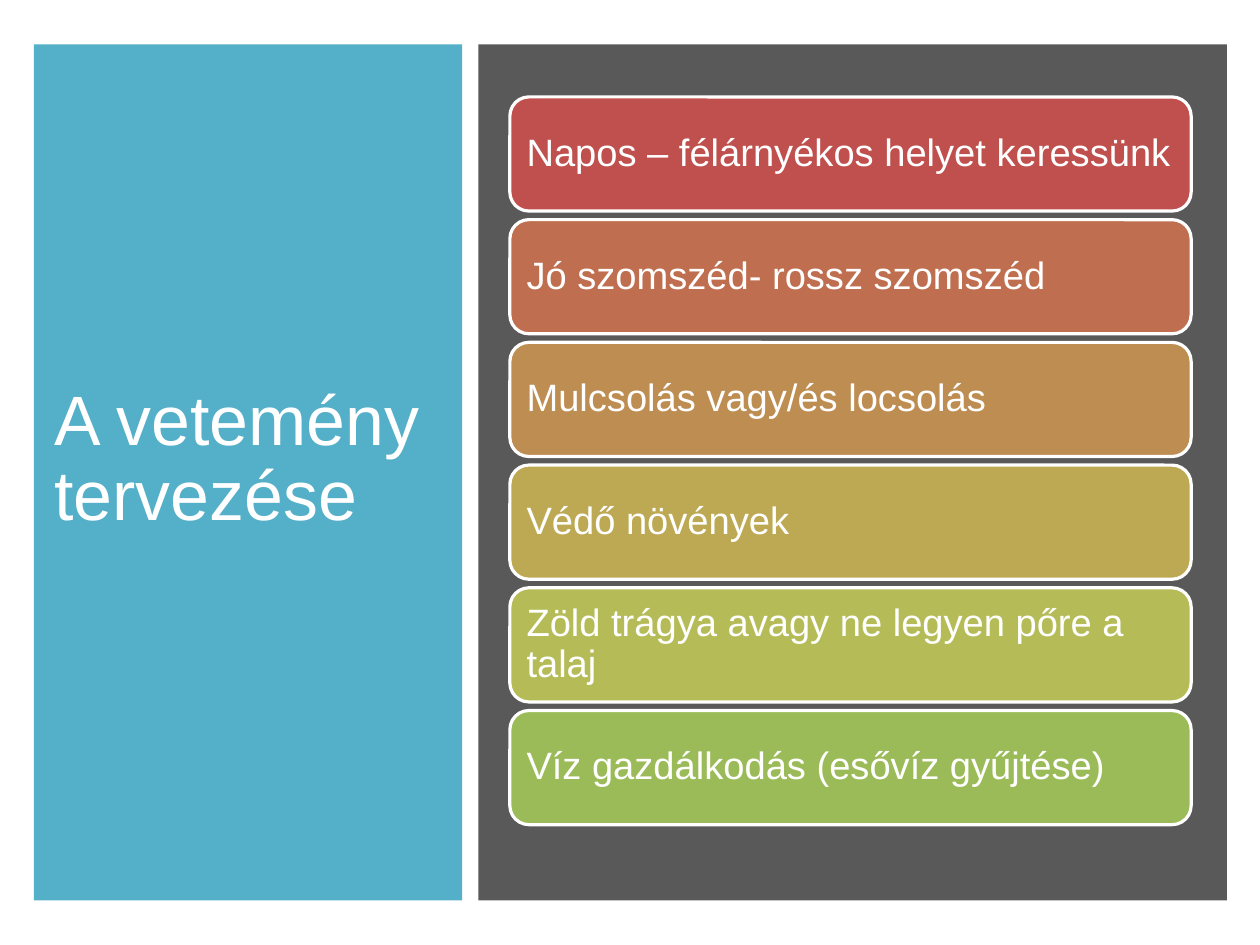
"""Build a slide with a title panel beside six planning tips for a vegetable garden."""
from lxml.etree import SubElement
from pptx import Presentation
from pptx.dml.color import RGBColor
from pptx.enum.shapes import MSO_SHAPE as Shape
from pptx.enum.text import MSO_ANCHOR as Anchor, PP_ALIGN as Align
from pptx.oxml.ns import qn
from pptx.util import Pt


def color(hex_code):
    return RGBColor.from_string(hex_code)


def write(box, text, size=24, inset=0, font="Arial", ink="FFFFFF"):
    frame = box.text_frame
    frame.word_wrap = True
    frame.vertical_anchor = Anchor.MIDDLE
    frame.margin_left = frame.margin_right = Pt(inset)
    frame.margin_top = frame.margin_bottom = Pt(inset)
    para = frame.paragraphs[0]
    para.alignment = Align.LEFT
    para.line_spacing = 0.9
    span = para.add_run()
    span.text = text
    span.font.size = Pt(size)
    span.font.name = font
    span.font.color.rgb = color(ink)


deck = Presentation()
deck.slide_width, deck.slide_height = Pt(793.75), Pt(595.25)
page = deck.slides.add_slide(deck.slide_layouts[6])

panels = []
for left, width, fill in [(21.4, 269.8, "4BACC6"), (301.4, 471.5, "595959")]:
    panel = page.shapes.add_shape(Shape.RECTANGLE, Pt(left), Pt(27.9), Pt(width), Pt(539.3))
    panel.shadow.inherit = False
    panel.fill.solid()
    panel.fill.fore_color.rgb = color(fill)
    panel.line.fill.background()
    panels.append(panel)

title_fill = panels[0].fill._xPr.find(qn("a:solidFill"))
SubElement(title_fill[0], qn("a:alpha"), val="95000")

title = page.shapes.add_textbox(Pt(34.2), Pt(50.4), Pt(242.6), Pt(479.5))
write(title, "A vetemény tervezése", size=44)

tips = [
    ("Napos – félárnyékos helyet keressünk", "C0504D"),
    ("Jó szomszéd- rossz szomszéd", "BF6F4F"),
    ("Mulcsolás vagy/és locsolás", "BE8D52"),
    ("Védő növények", "BDA954"),
    ("Zöld trágya avagy ne legyen pőre a talaj", "B5BC57"),
    ("Víz gazdálkodás (esővíz gyűjtése)", "9BBB59"),
]
first_top, pitch = 61.1, 77.3
for index, (text, fill) in enumerate(tips):
    top = first_top + index * pitch
    card = page.shapes.add_shape(Shape.ROUNDED_RECTANGLE, Pt(321.2), Pt(top), Pt(429.2), Pt(71.9))
    card.shadow.inherit = False
    card.fill.solid()
    card.fill.fore_color.rgb = color(fill)
    card.line.color.rgb = color("FFFFFF")
    card.line.width = Pt(2)
    write(card, text, inset=7)

deck.save("out.pptx")
